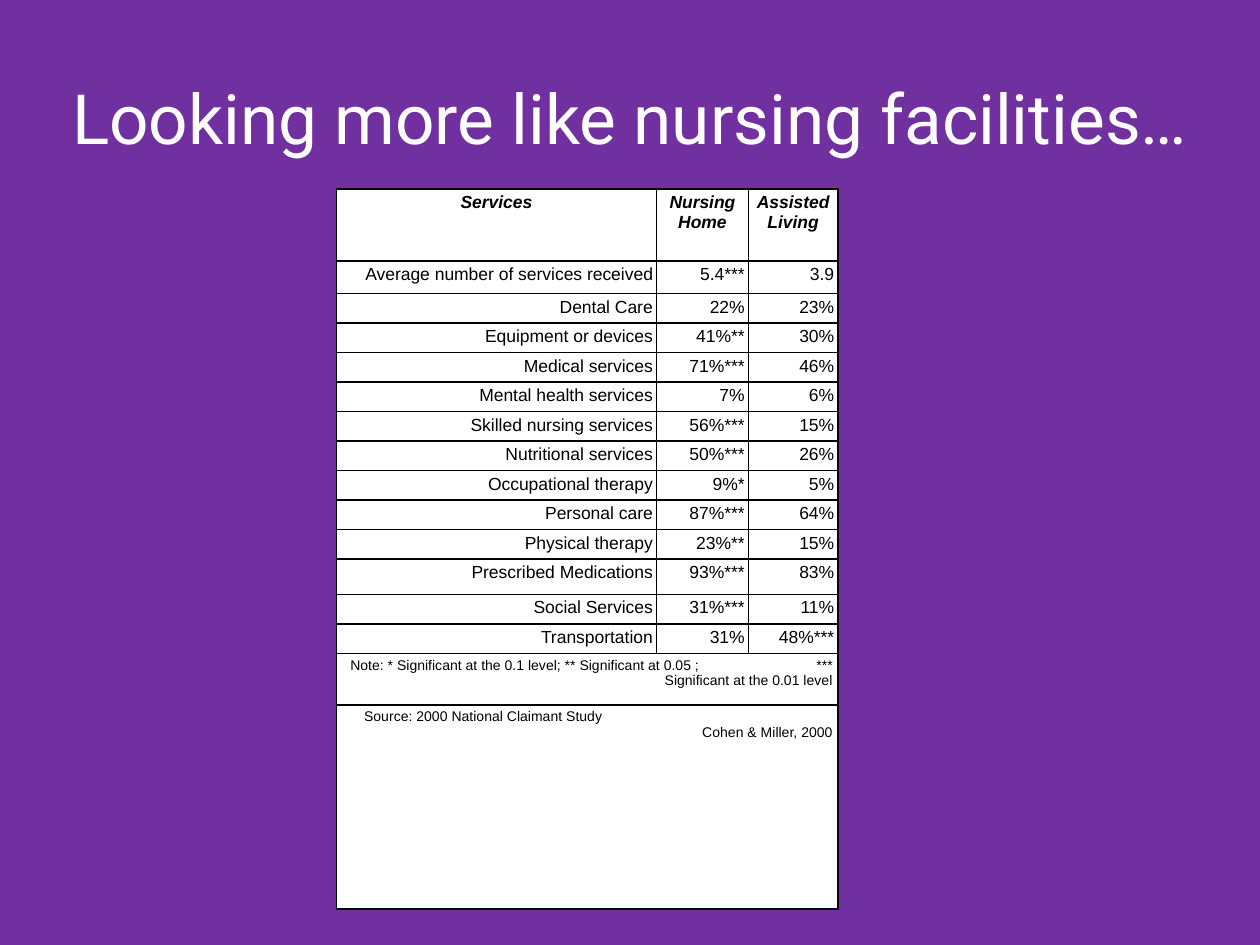
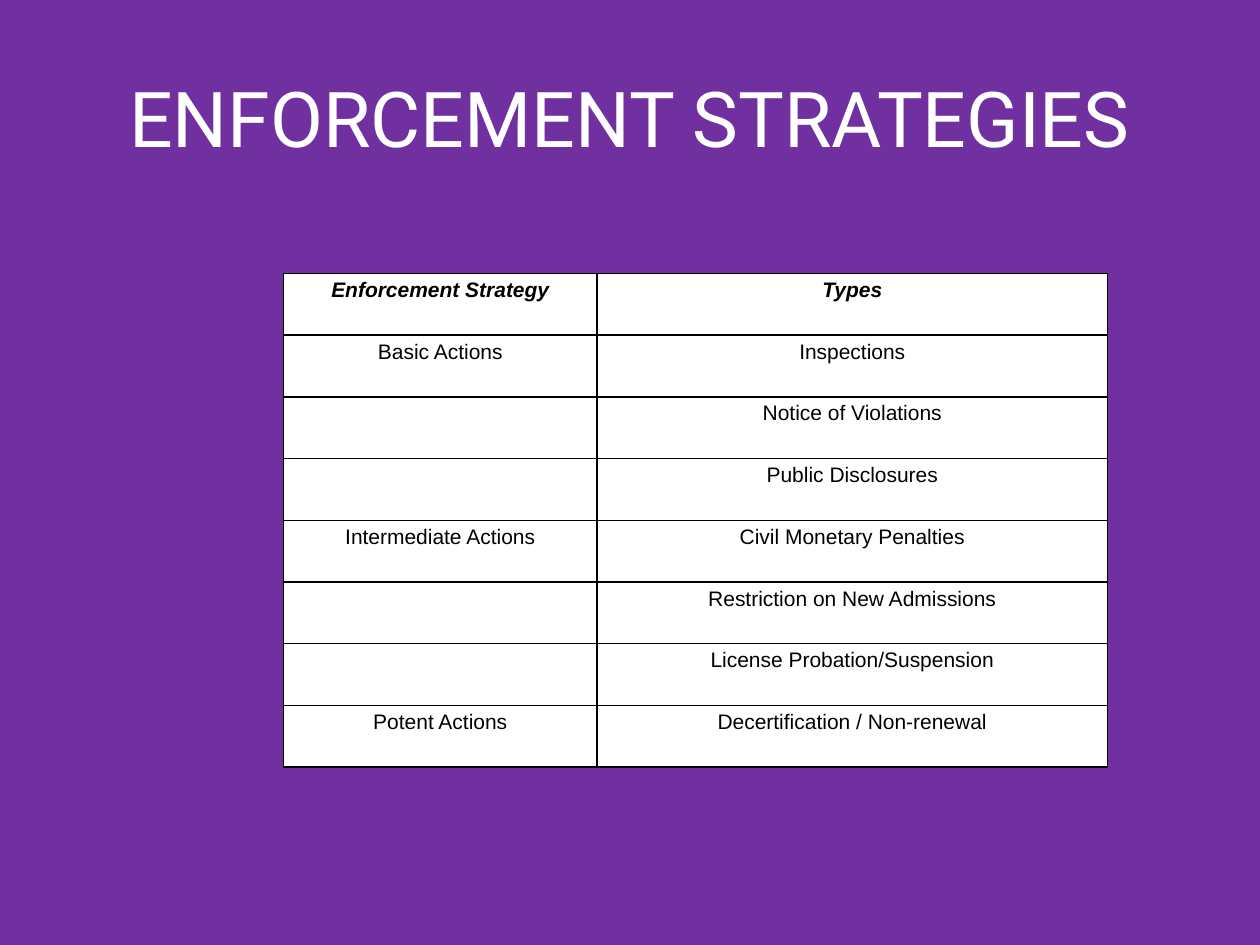
from dataclasses import dataclass

import pptx
import pptx.dml.color
import pptx.enum.text
import pptx.oxml
import pptx.oxml.ns
import pptx.util

Inches = pptx.util.Inches
Pt = pptx.util.Pt
Align = pptx.enum.text.PP_ALIGN

PURPLE = pptx.dml.color.RGBColor(0x70, 0x30, 0xA0)
WHITE = pptx.dml.color.RGBColor(0xFF, 0xFF, 0xFF)
BLACK = pptx.dml.color.RGBColor(0x00, 0x00, 0x00)
TITLE_FONT = "Roboto"
TABLE_FONT = "Arial"

SERVICES = [
    ("Services", "Nursing Home", "Assisted Living"),
    ("Average number of services received", "5.4***", "3.9"),
    ("Dental Care", "22%", "23%"),
    ("Equipment or devices", "41%**", "30%"),
    ("Medical services", "71%***", "46%"),
    ("Mental health services", "7%", "6%"),
    ("Skilled nursing services", "56%***", "15%"),
    ("Nutritional services", "50%***", "26%"),
    ("Occupational therapy", "9%*", "5%"),
    ("Personal care", "87%***", "64%"),
    ("Physical therapy", "23%**", "15%"),
    ("Prescribed Medications", "93%***", "83%"),
    ("Social Services", "31%***", "11%"),
    ("Transportation", "31%", "48%***"),
]
STRATEGIES = [
    ("Enforcement Strategy", "Types"),
    ("Basic Actions", "Inspections"),
    ("", "Notice of Violations"),
    ("", "Public Disclosures"),
    ("Intermediate Actions", "Civil Monetary Penalties"),
    ("", "Restriction on New Admissions"),
    ("", "License Probation/Suspension"),
    ("Potent Actions", "Decertification / Non-renewal"),
]


@dataclass(frozen=True)
class Footnote:
    """Full-width row; a tab in the text moves what follows to the right edge."""
    text: str
    indent: float
    height: float


@dataclass(frozen=True)
class TableSpec:
    left: float
    top: float
    column_widths: tuple[float, ...]
    row_heights: tuple[float, ...]
    rows: list[tuple[str, ...]]
    size: float
    margin: float
    body_alignment: Align
    footnotes: tuple[Footnote, ...] = ()


@dataclass(frozen=True)
class SlideSpec:
    title: str
    title_size: float
    title_left: float
    table: TableSpec


SERVICE_ROW = 0.2345
SERVICE_HEIGHTS = (0.57, 0.26, *[SERVICE_ROW] * 9, 0.28, *[SERVICE_ROW] * 2)
SLIDES = [
    SlideSpec(
        "Looking more like nursing facilities…", 39.6, 0.25,
        TableSpec(
            2.67, 1.5, (2.54, 0.73, 0.71), SERVICE_HEIGHTS, SERVICES,
            10, 0.03, Align.RIGHT,
            (
                Footnote(
                    "Note: * Significant at the 0.1 level; ** Significant at 0.05 ;"
                    "\t***\v\tSignificant at the 0.01 level", 0.11, 0.41),
                Footnote(
                    "Source: 2000 National Claimant Study\v\tCohen & Miller, 2000",
                    0.22, 1.62),
            ),
        ),
    ),
    SlideSpec(
        "ENFORCEMENT STRATEGIES", 44, 0.5,
        TableSpec(2.25, 2.17, (2.49, 4.05), (0.49,) * len(STRATEGIES), STRATEGIES,
                  12, 0.04, Align.CENTER),
    ),
]


def add_title(slide: pptx.slide.Slide, spec: SlideSpec) -> None:
    box = slide.shapes.add_textbox(
        Inches(spec.title_left), Inches(0.3),
        Inches(10 - 2 * spec.title_left), Inches(1.25))
    frame = box.text_frame
    frame.word_wrap = True
    frame.vertical_anchor = pptx.enum.text.MSO_ANCHOR.MIDDLE
    paragraph = frame.paragraphs[0]
    paragraph.text = spec.title
    paragraph.alignment = Align.CENTER
    paragraph.font.name = TITLE_FONT
    paragraph.font.size = Pt(spec.title_size)
    paragraph.font.color.rgb = WHITE


def add_borders(cell) -> None:
    properties = cell._tc.get_or_add_tcPr()
    for position, edge in enumerate(("lnL", "lnR", "lnT", "lnB")):
        line = pptx.oxml.parse_xml(
            f'<a:{edge} {pptx.oxml.ns.nsdecls("a")} w="{Pt(1)}">'
            f'<a:solidFill><a:srgbClr val="{BLACK}"/></a:solidFill></a:{edge}>')
        properties.insert(position, line)


def add_right_tab(paragraph, position: float) -> None:
    tabs = pptx.oxml.parse_xml(
        f'<a:tabLst {pptx.oxml.ns.nsdecls("a")}>'
        f'<a:tab pos="{Inches(position)}" algn="r"/></a:tabLst>')
    paragraph._p.get_or_add_pPr().find(pptx.oxml.ns.qn("a:defRPr")).addprevious(tabs)


def fill_cell(cell, text: str, size: float, margin: float, alignment: Align,
              header: bool = False):
    """Write and style the cell's single paragraph, and return it."""
    cell.margin_left = cell.margin_right = Inches(margin)
    cell.margin_top = cell.margin_bottom = Inches(margin)
    cell.fill.solid()
    cell.fill.fore_color.rgb = WHITE
    add_borders(cell)
    paragraph = cell.text_frame.paragraphs[0]
    paragraph.text = text
    paragraph.alignment = alignment
    paragraph.space_after = Pt(6)
    paragraph.font.name = TABLE_FONT
    paragraph.font.size = Pt(size)
    paragraph.font.bold = paragraph.font.italic = header
    paragraph.font.color.rgb = BLACK
    return paragraph


def add_footnote(table, row: int, note: Footnote, spec: TableSpec) -> None:
    last_column = len(spec.column_widths) - 1
    for column in range(last_column + 1):
        fill_cell(table.cell(row, column), "", 8, spec.margin, Align.LEFT)
    cell = table.cell(row, 0)
    cell.merge(table.cell(row, last_column))
    cell.margin_left = Inches(note.indent)
    paragraph = cell.text_frame.paragraphs[0]
    paragraph.text = note.text
    add_right_tab(paragraph, sum(spec.column_widths) - note.indent - spec.margin - 0.01)


def add_table(slide: pptx.slide.Slide, spec: TableSpec) -> None:
    heights = (*spec.row_heights, *(note.height for note in spec.footnotes))
    table = slide.shapes.add_table(
        len(heights), len(spec.column_widths), Inches(spec.left), Inches(spec.top),
        Inches(sum(spec.column_widths)), Inches(sum(heights))).table
    table.first_row = table.horz_banding = False
    for column, width in zip(table.columns, spec.column_widths):
        column.width = Inches(width)
    for row, height in zip(table.rows, heights):
        row.height = Inches(height)
    for row_index, texts in enumerate(spec.rows):
        header = row_index == 0
        alignment = Align.CENTER if header else spec.body_alignment
        for column_index, text in enumerate(texts):
            fill_cell(table.cell(row_index, column_index), text, spec.size,
                      spec.margin, alignment, header)
    for row_index, note in enumerate(spec.footnotes, start=len(spec.rows)):
        add_footnote(table, row_index, note, spec)


def main() -> None:
    presentation = pptx.Presentation()
    presentation.slide_width = Inches(10)
    presentation.slide_height = Inches(7.5)
    for spec in SLIDES:
        slide = presentation.slides.add_slide(presentation.slide_layouts[6])
        slide.background.fill.solid()
        slide.background.fill.fore_color.rgb = PURPLE
        add_title(slide, spec)
        add_table(slide, spec.table)
    presentation.save("out.pptx")


if __name__ == "__main__":
    main()
